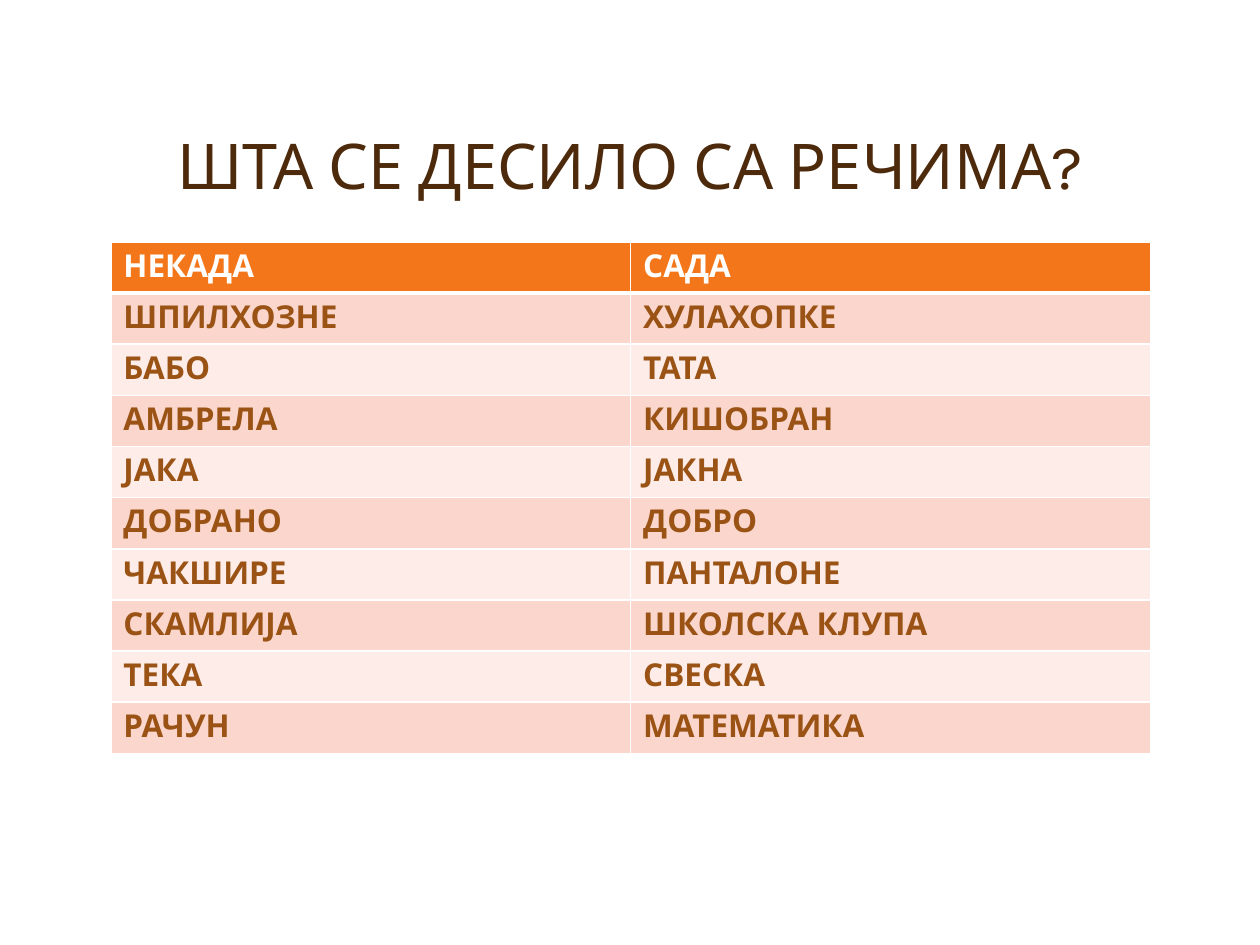
from lxml.etree import SubElement
from pptx import Presentation
from pptx.dml.color import RGBColor
from pptx.enum.text import MSO_ANCHOR, PP_ALIGN
from pptx.oxml.ns import qn
from pptx.util import Inches, Pt

# Content
TITLE = "ШТА СЕ ДЕСИЛО СА РЕЧИМА?"
WORDS = [
    ("НЕКАДА", "САДА"),
    ("ШПИЛХОЗНЕ", "ХУЛАХОПКЕ"),
    ("БАБО", "ТАТА"),
    ("АМБРЕЛА", "КИШОБРАН"),
    ("ЈАКА", "ЈАКНА"),
    ("ДОБРАНО", "ДОБРО"),
    ("ЧАКШИРЕ", "ПАНТАЛОНЕ"),
    ("СКАМЛИЈА", "ШКОЛСКА КЛУПА"),
    ("ТЕКА", "СВЕСКА"),
    ("РАЧУН", "МАТЕМАТИКА"),
]

# Look
FONT = "Karla"
COLORS = {"title": "4D2A0B", "head": "F3771A", "text": "9A5315",
          "odd": "FAD6CD", "even": "FDECE8", "white": "FFFFFF"}
LEFT, WIDTH = 0.88, 8.25
TOP, HEIGHT = 1.92, 4.06


def color(name):
    return RGBColor.from_string(COLORS[name])


def write(frame, text, size=18, ink="text", bold=False, align=PP_ALIGN.LEFT, lines=1.0):
    para = frame.paragraphs[0]
    para.alignment = align
    para.line_spacing = lines
    run = para.add_run()
    run.text = text
    font = run.font
    font.name, font.size, font.bold = FONT, Pt(size), bold
    font.color.rgb = color(ink)


def edge(cell, **widths):
    props = cell._tc.get_or_add_tcPr()
    for side, width in widths.items():
        line = SubElement(props, qn(f"a:ln{side}"), w=str(Pt(width)))
        fill = SubElement(line, qn("a:solidFill"))
        SubElement(fill, qn("a:srgbClr"), val=COLORS["white"])


deck = Presentation()
deck.slide_width, deck.slide_height = Inches(10), Inches(7.5)
slide = deck.slides.add_slide(deck.slide_layouts[6])

# Title
box = slide.shapes.add_textbox(Inches(LEFT), Inches(0.33), Inches(WIDTH), Inches(1.33))
frame = box.text_frame
frame.word_wrap = True
frame.vertical_anchor = MSO_ANCHOR.BOTTOM
write(frame, TITLE, size=36, ink="title", align=PP_ALIGN.CENTER, lines=0.9)

# Table of old and new words
table = slide.shapes.add_table(len(WORDS), 2, Inches(LEFT), Inches(TOP),
                               Inches(WIDTH), Inches(HEIGHT)).table
for r, pair in enumerate(WORDS):
    head = r == 0
    shade = "head" if head else ("even", "odd")[r % 2]
    for c, word in enumerate(pair):
        cell = table.cell(r, c)
        edge(cell, L=1, R=1, T=3 if r == 1 else 1, B=3 if head else 1)
        cell.fill.solid()
        cell.fill.fore_color.rgb = color(shade)
        write(cell.text_frame, word, bold=True, ink="white" if head else "text")

deck.save("out.pptx")
